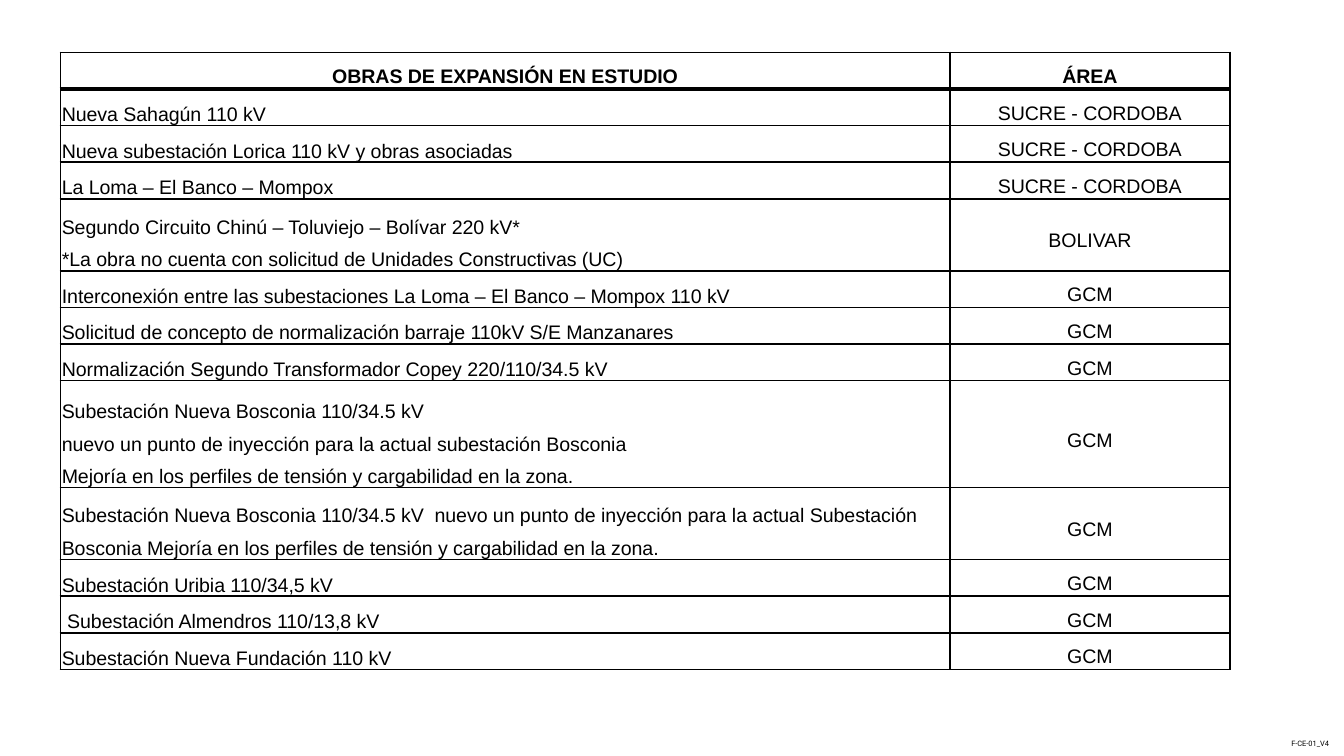
import dataclasses

import lxml.etree
import pptx
import pptx.dml.color
import pptx.enum.text
import pptx.oxml.ns
import pptx.util

Inches = pptx.util.Inches
Pt = pptx.util.Pt
Align = pptx.enum.text.PP_ALIGN
Anchor = pptx.enum.text.MSO_ANCHOR
qn = pptx.oxml.ns.qn


@dataclasses.dataclass(frozen=True)
class Theme:
    ink: str = "000000"
    table_font: str = "Arial"
    code_font: str = "Roboto"
    table_size: float = 10.5
    code_size: float = 4
    thin_line: float = 1
    header_line: float = 2
    line_spacing: float = 1.5


THEME = Theme()
SLIDE_WIDTH = 10
SLIDE_HEIGHT = SLIDE_WIDTH * 9 / 16
LINE_HEIGHT = 0.21
COLUMN_WIDTHS = (6.62, 2.08)
HEADER = ("OBRAS DE EXPANSIÓN EN ESTUDIO", "ÁREA")
WORKS = (
    ("Nueva Sahagún 110 kV", "SUCRE - CORDOBA", 1),
    ("Nueva subestación Lorica 110 kV y obras asociadas", "SUCRE - CORDOBA", 1),
    ("La Loma – El Banco – Mompox", "SUCRE - CORDOBA", 1),
    ("Segundo Circuito Chinú – Toluviejo – Bolívar 220 kV*\n"
     "*La obra no cuenta con solicitud de Unidades Constructivas (UC)", "BOLIVAR", 2),
    ("Interconexión entre las subestaciones La Loma – El Banco – Mompox 110 kV", "GCM", 1),
    ("Solicitud de concepto de normalización barraje 110kV S/E Manzanares", "GCM", 1),
    ("Normalización Segundo Transformador Copey 220/110/34.5 kV", "GCM", 1),
    ("Subestación Nueva Bosconia 110/34.5 kV \n"
     "nuevo un punto de inyección para la actual subestación Bosconia \n"
     "Mejoría en los perfiles de tensión y cargabilidad en la zona.", "GCM", 3),
    ("Subestación Nueva Bosconia 110/34.5 kV  nuevo un punto de inyección para la actual "
     "Subestación Bosconia Mejoría en los perfiles de tensión y cargabilidad en la zona.",
     "GCM", 1),
    ("Subestación Uribia 110/34,5 kV", "GCM", 1),
    (" Subestación Almendros 110/13,8 kV", "GCM", 1),
    ("Subestación Nueva Fundación 110 kV", "GCM", 1),
)


def apply_format(target, values):
    for name, value in values.items():
        setattr(target, name, value)


def write_text(paragraph, text, font_name, size, bold=False):
    paragraph.text = text
    for run in paragraph.runs:
        apply_format(run.font, {"name": font_name, "size": Pt(size), "bold": bold})
        run.font.color.rgb = pptx.dml.color.RGBColor.from_string(THEME.ink)
    for line_break in paragraph._p.findall(qn("a:br")):
        properties = lxml.etree.SubElement(line_break, qn("a:rPr"))
        properties.set("sz", str(int(size * 100)))


def set_borders(cell, widths):
    cell_properties = cell._tc.get_or_add_tcPr()
    for index, (side, width) in enumerate(widths.items()):
        line = lxml.etree.Element(qn(f"a:ln{side}"), w=str(Pt(width)))
        fill = lxml.etree.SubElement(line, qn("a:solidFill"))
        lxml.etree.SubElement(fill, qn("a:srgbClr"), val=THEME.ink)
        cell_properties.insert(index, line)


def fill_cell(cell, text, centered, anchor, bold, borders):
    apply_format(cell, {
        "margin_left": Inches(0.01),
        "margin_right": Inches(0.01),
        "margin_top": Inches(0.01),
        "margin_bottom": Inches(0),
        "vertical_anchor": anchor,
    })
    cell.fill.background()
    paragraph = cell.text_frame.paragraphs[0]
    apply_format(paragraph, {
        "alignment": Align.CENTER if centered else Align.LEFT,
        "line_spacing": THEME.line_spacing,
    })
    write_text(paragraph, text, THEME.table_font, THEME.table_size, bold)
    set_borders(cell, borders)


def add_works_table(slide):
    rows = [(*HEADER, 1), *WORKS]
    heights = [LINE_HEIGHT * lines for *_, lines in rows]
    table = slide.shapes.add_table(
        len(rows), len(COLUMN_WIDTHS), Inches(0.45), Inches(0.39),
        Inches(sum(COLUMN_WIDTHS)), Inches(sum(heights))).table
    apply_format(table, {"first_row": False, "horz_banding": False})
    for column, width in zip(table.columns, COLUMN_WIDTHS):
        column.width = Inches(width)
    for index, (work, area, _) in enumerate(rows):
        table.rows[index].height = Inches(heights[index])
        is_header = index == 0
        borders = dict.fromkeys("LRTB", THEME.thin_line)
        if index < 2:
            borders["B" if is_header else "T"] = THEME.header_line
        work_anchor = Anchor.MIDDLE if is_header else Anchor.BOTTOM
        fill_cell(table.cell(index, 0), work, is_header, work_anchor, is_header, borders)
        fill_cell(table.cell(index, 1), area, True, Anchor.MIDDLE, is_header, borders)


def add_form_code(slide):
    box = slide.shapes.add_textbox(Inches(9.51), Inches(5.45), Inches(0.49), Inches(0.17))
    apply_format(box.text_frame, {
        "word_wrap": False,
        "auto_size": pptx.enum.text.MSO_AUTO_SIZE.SHAPE_TO_FIT_TEXT,
    })
    write_text(box.text_frame.paragraphs[0], "F-CE-01_V4", THEME.code_font, THEME.code_size)


def main():
    presentation = pptx.Presentation()
    apply_format(presentation, {
        "slide_width": Inches(SLIDE_WIDTH),
        "slide_height": Inches(SLIDE_HEIGHT),
    })
    slide = presentation.slides.add_slide(presentation.slide_layouts[6])
    add_form_code(slide)
    add_works_table(slide)
    presentation.save("out.pptx")


if __name__ == "__main__":
    main()
